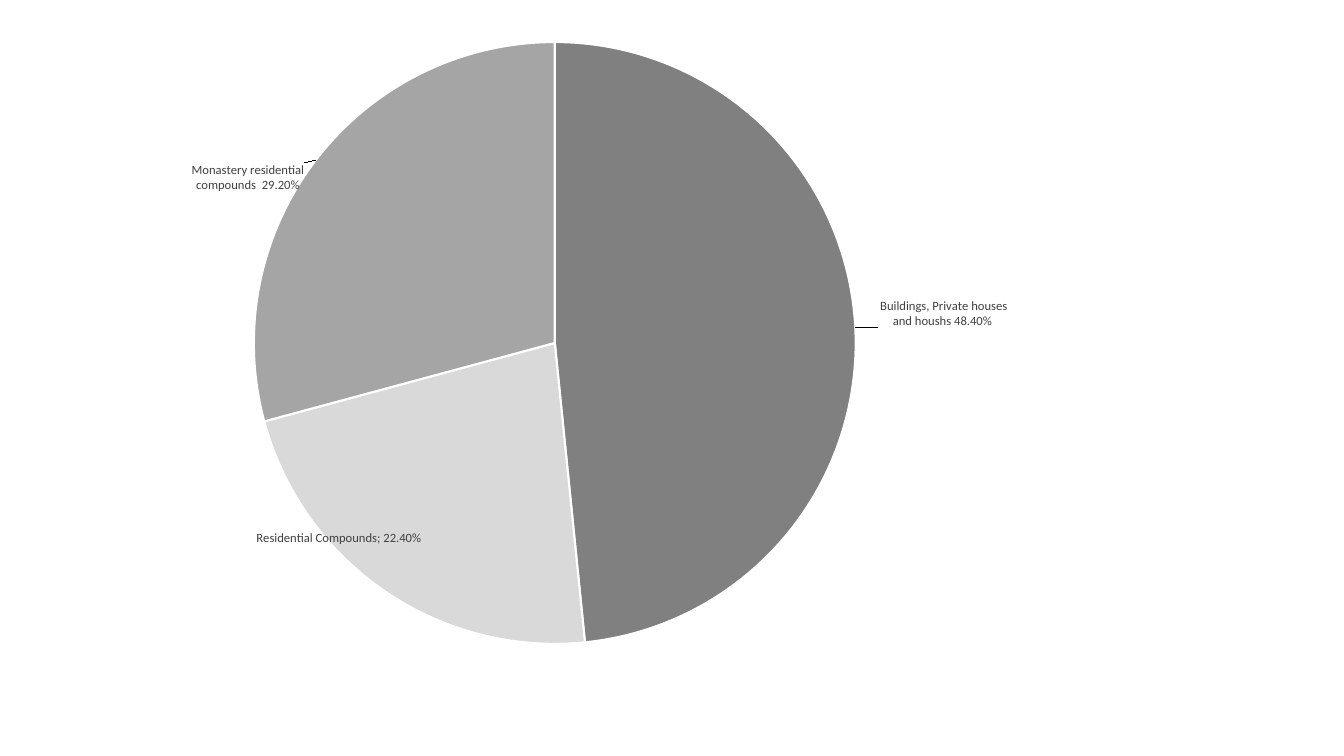
from dataclasses import dataclass

from lxml import etree
from pptx import Presentation
from pptx.chart.data import CategoryChartData
from pptx.dml.color import RGBColor
from pptx.enum.chart import XL_CHART_TYPE, XL_LABEL_POSITION
from pptx.oxml.ns import qn
from pptx.util import Emu, Pt

PIE = XL_CHART_TYPE.PIE
OUTSIDE_END = XL_LABEL_POSITION.OUTSIDE_END
BLANK_LAYOUT = 6
EMU_PER_PX = 914400 / 100.8


@dataclass(frozen=True)
class Theme:
    font: str = "Calibri"
    chart_size: int = 10
    label_size: int = 9
    chart_text: str = "000000"
    label_text: str = "404040"
    separator: str = "FFFFFF"
    separator_width: float = 1.5


THEME = Theme()
PERCENT = "0.00%"
CHART_BOX = (131, 24, 897, 638)
PIE_BOX = (123, 18, 602, 602)
HOUSING = [
    {"category": "Monasteries", "share": 0.484, "color": "808080",
     "label": " Buildings, Private houses and houshs 48.40%", "shift": (16, -14)},
    {"category": "Residential Compounds", "share": 0.224, "color": "D9D9D9",
     "label": None, "shift": (40, -65)},
    {"category": "Buildlings, private houses, hoashs", "share": 0.292, "color": "A5A5A5",
     "label": "Monastery residential compounds  29.20%", "shift": (-7, 36)},
]


def px(length):
    return Emu(round(length * EMU_PER_PX))


def format_font(font, size, color):
    for name, value in {"name": THEME.font, "size": Pt(size), "bold": False}.items():
        setattr(font, name, value)
    font.color.rgb = RGBColor.from_string(color)


def manual_layout(values):
    layout = etree.Element(qn("c:layout"))
    manual = etree.SubElement(layout, qn("c:manualLayout"))
    for tag, value in values.items():
        etree.SubElement(manual, qn(f"c:{tag}")).set("val", str(value))
    return layout


def place_plot(chart, chart_box, pie_box):
    width, height = chart_box[2:]
    left, top, pie_width, pie_height = pie_box
    plot_area = chart.element.find(f".//{qn('c:plotArea')}")
    for layout in plot_area.findall(qn("c:layout")):
        plot_area.remove(layout)
    plot_area.insert(0, manual_layout({
        "layoutTarget": "inner", "xMode": "edge", "yMode": "edge",
        "x": round(left / width, 3), "y": round(top / height, 3),
        "w": round(pie_width / width, 3), "h": round(pie_height / height, 3),
    }))


def format_slice(point, housing):
    point.format.fill.solid()
    point.format.fill.fore_color.rgb = RGBColor.from_string(housing["color"])
    point.format.line.color.rgb = RGBColor.from_string(THEME.separator)
    point.format.line.width = Pt(THEME.separator_width)


def label_slice(label, housing):
    if housing["label"]:
        run = label.text_frame.paragraphs[0].add_run()
        run.text = housing["label"]
        format_font(run.font, THEME.label_size, THEME.label_text)
    else:
        format_font(label.font, THEME.label_size, THEME.label_text)
    label.position = OUTSIDE_END


def shift_labels(series, chart_box):
    width, height = chart_box[2:]
    for element, housing in zip(series.data_labels._element.findall(qn("c:dLbl")), HOUSING):
        element.find(qn("c:showCatName")).set("val", "1")
        shift_x, shift_y = housing["shift"]
        element.insert(1, manual_layout({
            "x": round(shift_x / width, 3), "y": round(shift_y / height, 3),
        }))


def add_housing_pie(slide, box):
    data = CategoryChartData(number_format=PERCENT)
    data.categories = [housing["category"] for housing in HOUSING]
    data.add_series("Series 1", [housing["share"] for housing in HOUSING])
    chart = slide.shapes.add_chart(PIE, *map(px, box), data).chart
    chart.has_legend = False
    chart.has_title = False
    format_font(chart.font, THEME.chart_size, THEME.chart_text)
    place_plot(chart, box, PIE_BOX)

    chart.plots[0].vary_by_categories = True
    series = chart.plots[0].series[0]
    labels = series.data_labels
    label_format = {
        "show_value": True, "show_category_name": True, "number_format": PERCENT,
        "number_format_is_linked": False, "position": OUTSIDE_END,
    }
    for name, value in label_format.items():
        setattr(labels, name, value)
    format_font(labels.font, THEME.label_size, THEME.label_text)
    for index, housing in enumerate(HOUSING):
        format_slice(series.points[index], housing)
        label_slice(series.points[index].data_label, housing)
    shift_labels(series, box)


def main():
    presentation = Presentation()
    presentation.slide_width = px(1344)
    presentation.slide_height = px(756)
    slide = presentation.slides.add_slide(presentation.slide_layouts[BLANK_LAYOUT])
    add_housing_pie(slide, CHART_BOX)
    presentation.save("out.pptx")


if __name__ == "__main__":
    main()
